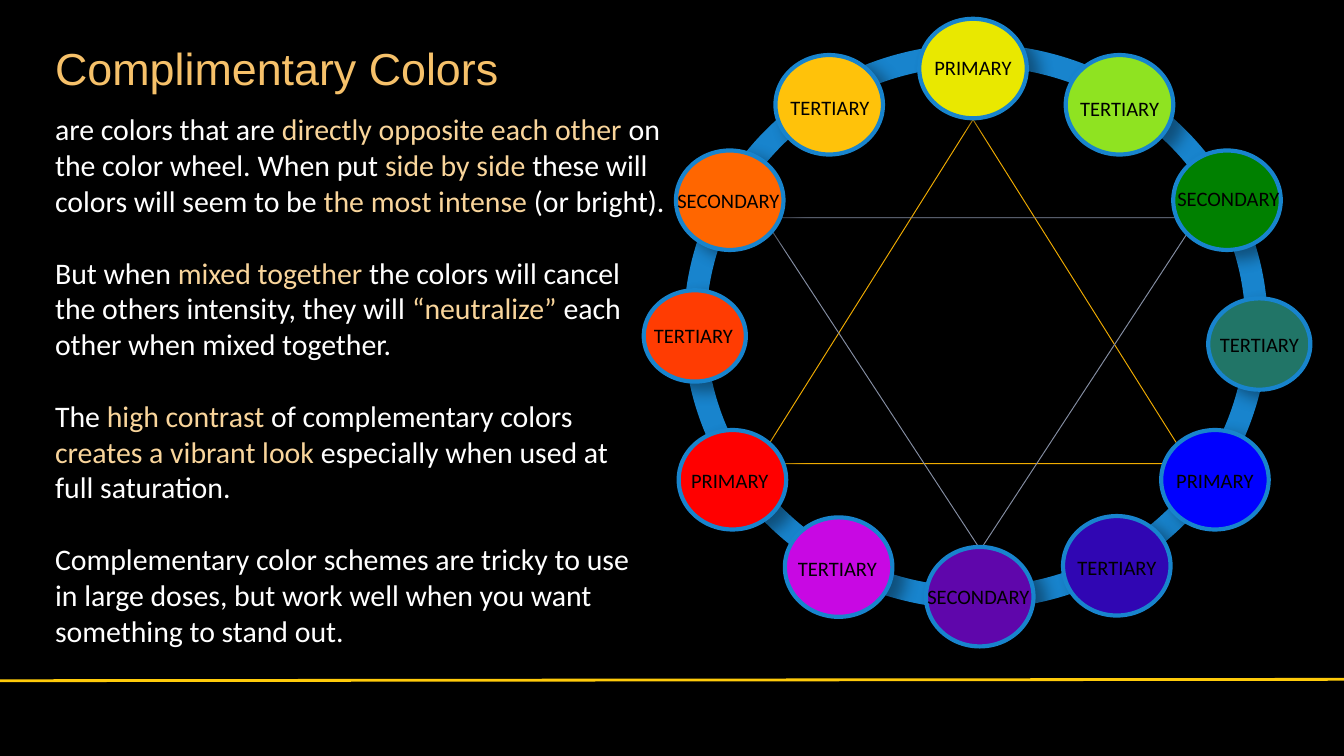
from lxml.etree import SubElement
from pptx import Presentation
from pptx.dml.color import RGBColor
from pptx.enum.shapes import MSO_CONNECTOR, MSO_SHAPE
from pptx.enum.text import MSO_ANCHOR, MSO_AUTO_SIZE, PP_ALIGN
from pptx.oxml.ns import qn
from pptx.util import Inches, Pt

INK = {
    "back": "000000", "text": "FFFFFF", "title": "F6C16A", "key": "F9D59B",
    "rule": "FFCB0A", "ring": "1884CD", "warm": "F0AC00", "cool": "858EA3",
    "yellow": "E9E800", "lime": "8FE321", "green": "008000", "teal": "217567",
    "blue": "0000FF", "indigo": "3006B3", "violet": "5F06AB",
    "magenta": "C808E3", "red": "FF0000", "scarlet": "FF3C02",
    "orange": "FF6600", "amber": "FFC20A",
}
COLS, ROWS = 100, 56.25  # square cells, a tenth of an inch

# Runs alternate between plain and key colour; \n is a line break
BODY = [
    ["are colors that are ", "directly opposite each other",
     " on the color wheel. When put ", "side by side ",
     "these will colors will seem to be ", "the most intense ",
     "(or bright)."],
    ["But when ", "mixed together ",
     "the colors will cancel \nthe others intensity, they will ",
     "“neutralize” ", "each other when mixed together."],
    ["The ", "high contrast", " of complementary colors \n",
     "creates a vibrant look ", "especially when used at \nfull saturation."],
    ["Complementary color schemes are tricky to use \n"
     "in large doses, but work well when you want something to stand out."],
]

# Colour, word, disc left and top, label centre and top, disc size
BIG, SMALL = (8, 7.4), (7.6, 6.8)
DISCS = [
    ("yellow", "PRIMARY", 68.4, 1.4, 72.4, 3.6, BIG),
    ("red", "PRIMARY", 50.5, 32, 54.3, 34.3, BIG),
    ("blue", "PRIMARY", 86.4, 32, 90.4, 34.3, BIG),
    ("lime", "TERTIARY", 79.3, 4.1, 83.3, 6.65, BIG),
    ("green", "SECONDARY", 87.3, 11.2, 91.4, 13.35, BIG),
    ("teal", "TERTIARY", 89.9, 22.2, 93.7, 24.2, SMALL),
    ("indigo", "TERTIARY", 79.1, 38.4, 83.1, 40.8, BIG),
    ("violet", "SECONDARY", 68.9, 40.7, 72.8, 42.95, BIG),
    ("magenta", "TERTIARY", 58.4, 38.5, 62.3, 40.9, BIG),
    ("scarlet", "TERTIARY", 47.9, 21.6, 51.6, 23.55, SMALL),
    ("orange", "SECONDARY", 50.3, 11.2, 54.2, 13.5, BIG),
    ("amber", "TERTIARY", 57.7, 4.1, 61.75, 6.6, BIG),
]


def tint(name):
    return RGBColor.from_string(INK[name])


class Page:
    def __init__(self):
        self.deck = Presentation()
        self.deck.slide_width = Inches(COLS / 10)
        self.deck.slide_height = Inches(ROWS / 10)
        self.cell = self.deck.slide_width / COLS
        self.slide = self.deck.slides.add_slide(self.deck.slide_layouts[1])
        back = self.slide.background.fill
        back.solid()
        back.fore_color.rgb = tint("back")

    def grid(self, *cells):
        return [round(n * self.cell) for n in cells]

    def font(self, para, face, size):
        para.font.name, para.font.size = face, Pt(size)

    def holder(self, index, area):
        item = self.slide.placeholders[index]
        item.left, item.top, item.width, item.height = self.grid(*area)
        frame = item.text_frame
        frame.word_wrap = True
        frame.auto_size = MSO_AUTO_SIZE.NONE
        frame.vertical_anchor = MSO_ANCHOR.TOP
        return frame

    def title(self, text, area):
        frame = self.holder(0, area)
        frame.text = text
        para = frame.paragraphs[0]
        para.alignment = PP_ALIGN.LEFT
        self.font(para, "Arial", 24)
        para.font.color.rgb = tint("title")

    def body(self, paras, area):
        frame = self.holder(1, area)
        for i, parts in enumerate(paras):
            para = frame.add_paragraph() if i else frame.paragraphs[0]
            props = para._p.get_or_add_pPr()
            props.set("marL", "0")
            props.set("indent", "0")
            SubElement(props, qn("a:buNone"))
            para.space_before = Pt(19.2 if i else 0)
            self.font(para, "Calibri", 16)
            for j, text in enumerate(parts):
                self.runs(para, text, "key" if j % 2 else "text")

    def runs(self, para, text, color):
        for i, line in enumerate(text.split("\n")):
            if i:
                para.add_line_break()
            if line:
                run = para.add_run()
                run.text = line
                run.font.color.rgb = tint(color)

    def rule(self, ends, color, width):
        line = self.slide.shapes.add_connector(
            MSO_CONNECTOR.STRAIGHT, *self.grid(*ends))
        line.line.color.rgb, line.line.width = tint(color), Pt(width)
        SubElement(line._element.spPr, qn("a:effectLst"))

    def shape(self, kind, area, edge, width, fill=None, turn=0):
        item = self.slide.shapes.add_shape(kind, *self.grid(*area))
        item.shadow.inherit = False
        item.rotation = turn
        item.line.color.rgb, item.line.width = tint(edge), Pt(width)
        if fill:
            item.fill.solid()
            item.fill.fore_color.rgb = tint(fill)
        else:
            item.fill.background()
        return item

    def disc(self, area, fill):
        item = self.shape(MSO_SHAPE.OVAL, area, "ring", 2.25, fill)
        effects = item._element.spPr.find(qn("a:effectLst"))
        shade = SubElement(effects, qn("a:outerShdw"), blurRad=str(Pt(8.8)),
                           dist=str(Pt(7)), dir=str(35 * 60000),
                           rotWithShape="0")
        color = SubElement(shade, qn("a:srgbClr"), val=INK["back"])
        SubElement(color, qn("a:alpha"), val="40000")

    def label(self, text, mid, top):
        wide = 10.1
        box = self.slide.shapes.add_textbox(
            *self.grid(mid - wide / 2, top, wide, 2.9))
        box.text_frame.word_wrap = True
        para = box.text_frame.paragraphs[0]
        para.text, para.alignment = text, PP_ALIGN.CENTER
        self.font(para, "Calibri", 11)
        para.font.color.rgb = tint("back")


def main():
    page = Page()

    # Text column and footer rule
    page.rule((0, 50.65, COLS, 50.55), "rule", 1.5)
    page.title("Complimentary Colors", (3.1, 2.5, 44.5, 5))
    page.body(BODY, (3.1, 7.75, 47.9, 48))

    # Ring and the two triangles inside it
    page.shape(MSO_SHAPE.OVAL, (51.7, 4.1, 41.8, 40.4), "ring", 12)
    peak = MSO_SHAPE.FLOWCHART_EXTRACT
    page.shape(peak, (56.3, 8.9, 32.2, 25.6), "warm", 0.5)
    page.shape(peak, (56.8, 16.2, 32.3, 24.7), "cool", 0.5, turn=180)

    # Colour discs, then their labels on top
    for color, _, left, top, _, _, size in DISCS:
        page.disc((left, top, *size), color)
    for _, word, _, _, mid, top, _ in DISCS:
        page.label(word, mid, top)

    page.deck.save("out.pptx")


if __name__ == "__main__":
    main()
